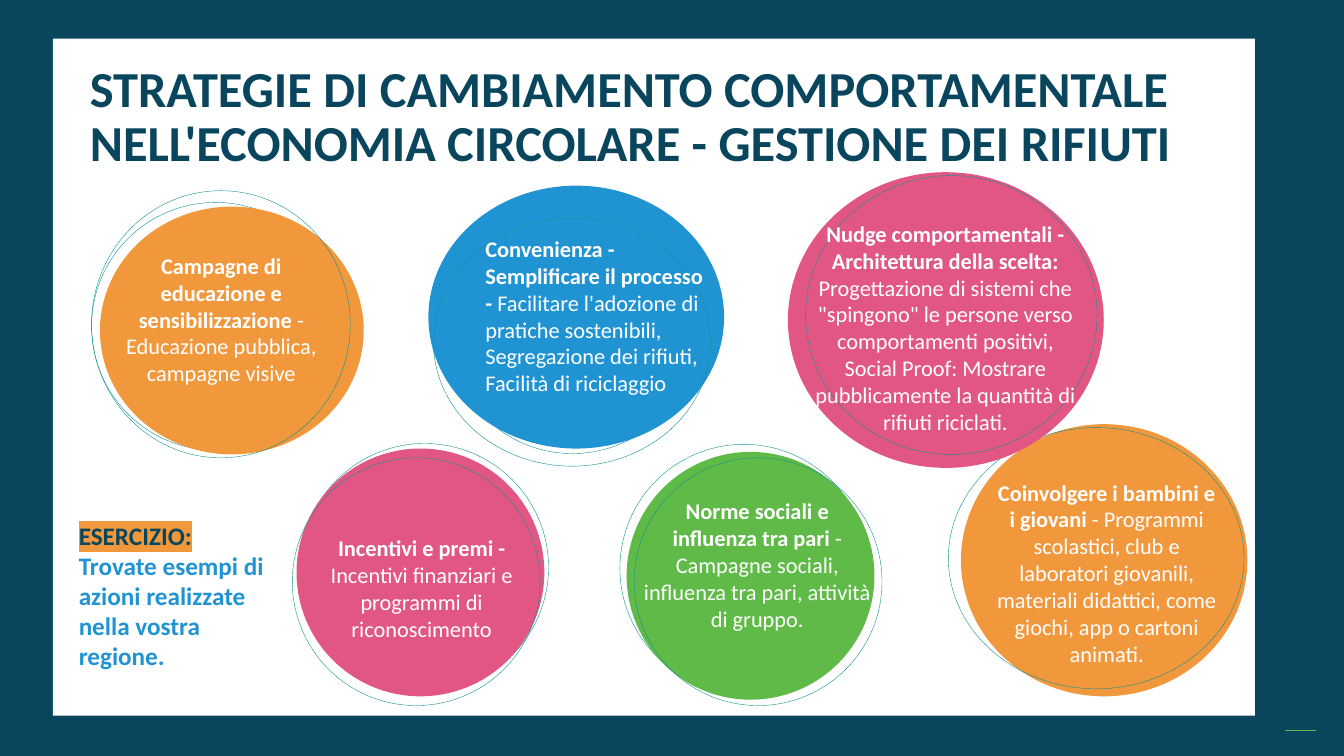
from lxml.etree import SubElement
from pptx import Presentation
from pptx.dml.color import RGBColor
from pptx.enum.shapes import MSO_CONNECTOR, MSO_SHAPE
from pptx.enum.text import MSO_ANCHOR, PP_ALIGN
from pptx.oxml.ns import qn
from pptx.util import Inches, Pt

COLORS = {
    "navy": "09465E", "white": "FFFFFF", "orange": "F1983D", "pink": "E25684",
    "blue": "2094D2", "green": "60BA47", "teal": "0D9390",
}
FONT = "Calibri"
COLS, ROWS = 16, 9
LEFT, MID = PP_ALIGN.LEFT, PP_ALIGN.CENTER
ROUND = (2.95, 2.95)

# Boxes are column, row, columns wide, rows high.
# Each bubble: colour, back ring, disc, front ring, text box, alignment, bold text, plain text
BUBBLES = [
    ("orange", (1.09, 2.41, *ROUND), (1.19, 2.46, 3.14, 2.95),
     (1.09, 2.27, 3.08, 3.18), (1.28, 2.94, 2.71, 1.74), MID,
     "Campagne di educazione e sensibilizzazione ",
     "- Educazione pubblica, campagne visive"),
    ("pink", (3.58, 5.28, *ROUND), (3.53, 5.34, *ROUND),
     (3.48, 5.45, *ROUND), (3.52, 6.3, 3, 1.09), MID,
     "Incentivi e premi - ",
     "Incentivi finanziari e programmi di riconoscimento"),
    ("blue", (5.34, 2.45, *ROUND), (5.1, 2.21, 3.52, 3.13),
     (5.16, 2.6, 3.3, 2.95), (5.66, 2.74, 2.95, 2.06), LEFT,
     "Convenienza - Semplificare il processo - ",
     "Facilitare l'adozione di pratiche sostenibili, "
     "Segregazione dei rifiuti, Facilità di riciclaggio"),
    ("orange", (11.69, 5.21, *ROUND), (11.44, 5.05, 3.41, 3.24),
     (11.29, 5.09, 3.52, 3.11), (11.7, 5.64, 2.95, 2.78), MID,
     "Coinvolgere i bambini e i giovani ",
     "- Programmi scolastici, club e laboratori giovanili, "
     "materiali didattici, come giochi, app o cartoni animati."),
    ("green", (7.38, 5.29, *ROUND), (7.46, 5.38, *ROUND),
     (7.55, 5.45, *ROUND), (7.54, 5.86, 2.95, 2.14), MID,
     "Norme sociali e influenza tra pari ",
     "- Campagne sociali, influenza tra pari, attività di gruppo."),
    ("pink", (9.48, 2.44, 3.11, 2.95), (9.38, 2.05, 3.76, 3.52),
     (9.59, 2.09, 3.47, 3.32), (9.55, 2.56, 3.41, 3.07), MID,
     "Nudge comportamentali - Architettura della scelta: ",
     'Progettazione di sistemi che "spingono" le persone verso '
     "comportamenti positivi, Social Proof: Mostrare pubblicamente "
     "la quantità di rifiuti riciclati."),
]


def paint(name):
    return RGBColor.from_string(COLORS[name])


class Deck:
    def __init__(self):
        self.prs = Presentation()
        self.prs.slide_width = Inches(13.33)
        self.prs.slide_height = Inches(7.5)
        self.slide = self.prs.slides.add_slide(self.prs.slide_layouts[5])
        self.shapes = self.slide.shapes

    def place(self, *box):
        """Turn grid columns and rows into slide lengths."""
        sizes = (self.prs.slide_width / COLS, self.prs.slide_height / ROWS)
        return [round(num * sizes[i % 2]) for i, num in enumerate(box)]

    def shape(self, kind, box, fill=None, line=None):
        item = self.shapes.add_shape(kind, *self.place(*box))
        item.shadow.inherit = False
        if fill:
            item.fill.solid()
            item.fill.fore_color.rgb = paint(fill)
        else:
            item.fill.background()
        if line:
            item.line.color.rgb = paint(line)
            item.line.width = Pt(0.28)
        else:
            item.line.fill.background()

    def rule(self, start, end, color):
        item = self.shapes.add_connector(
            MSO_CONNECTOR.STRAIGHT, *self.place(*start, *end))
        item.line.color.rgb = paint(color)
        item.line.width = Pt(1)
        SubElement(item.element.spPr, qn("a:effectLst"))

    def run(self, para, text, size, color, bold=True, mark=None):
        run = para.add_run()
        run.text = text
        font = run.font
        font.size, font.bold, font.name = Pt(size), bold, FONT
        font.color.rgb = paint(color)
        if mark:
            tag = SubElement(run._r.rPr, qn("a:highlight"))
            SubElement(tag, qn("a:srgbClr"), val=COLORS[mark])
            run._r.rPr.find(qn("a:solidFill")).addnext(tag)

    def title(self, box, text):
        item = self.shapes.title
        item.left, item.top, item.width, item.height = self.place(*box)
        item.element.getparent().append(item.element)  # in front of the frame
        item.text_frame.vertical_anchor = MSO_ANCHOR.TOP
        para = item.text_frame.paragraphs[0]
        para.alignment, para.line_spacing = LEFT, 0.9
        self.run(para, text, 36, "navy")

    def text(self, box, paras, size, align=LEFT):
        """Each paragraph is a list of runs: text, colour, bold, highlight."""
        frame = self.shapes.add_textbox(*self.place(*box)).text_frame
        frame.word_wrap = True
        for i, runs in enumerate(paras):
            para = frame.add_paragraph() if i else frame.paragraphs[0]
            para.alignment = align
            for words, *look in runs:
                self.run(para, words, size, *look)

    def bubble(self, color, back, disc, front, box, align, head, body):
        self.shape(MSO_SHAPE.OVAL, back, line="teal")
        self.shape(MSO_SHAPE.OVAL, disc, fill=color)
        self.shape(MSO_SHAPE.OVAL, front, line="teal")
        self.text(box, [[(head, "white"), (body, "white", False)]], 16, align)


def main():
    deck = Deck()
    deck.shape(MSO_SHAPE.RECTANGLE, (0, 0, COLS, ROWS), "navy")
    deck.shape(MSO_SHAPE.RECTANGLE, (0.63, 0.46, 14.31, 8.06), "white")
    deck.rule((15.3, 8.7), (15.67, 8.7), "green")
    deck.title((0.95, 0.7, 13.19, 1.06),
               "STRATEGIE DI CAMBIAMENTO COMPORTAMENTALE "
               "NELL'ECONOMIA CIRCOLARE - GESTIONE DEI RIFIUTI")
    for bubble in BUBBLES:
        deck.bubble(*bubble)
    deck.text((0.82, 6.13, 2.65, 2.3), [
        [("ESERCIZIO:", "navy", True, "orange")],
        [("Trovate esempi di azioni realizzate nella vostra regione.", "blue")],
    ], 18)
    deck.prs.save("out.pptx")


if __name__ == "__main__":
    main()
